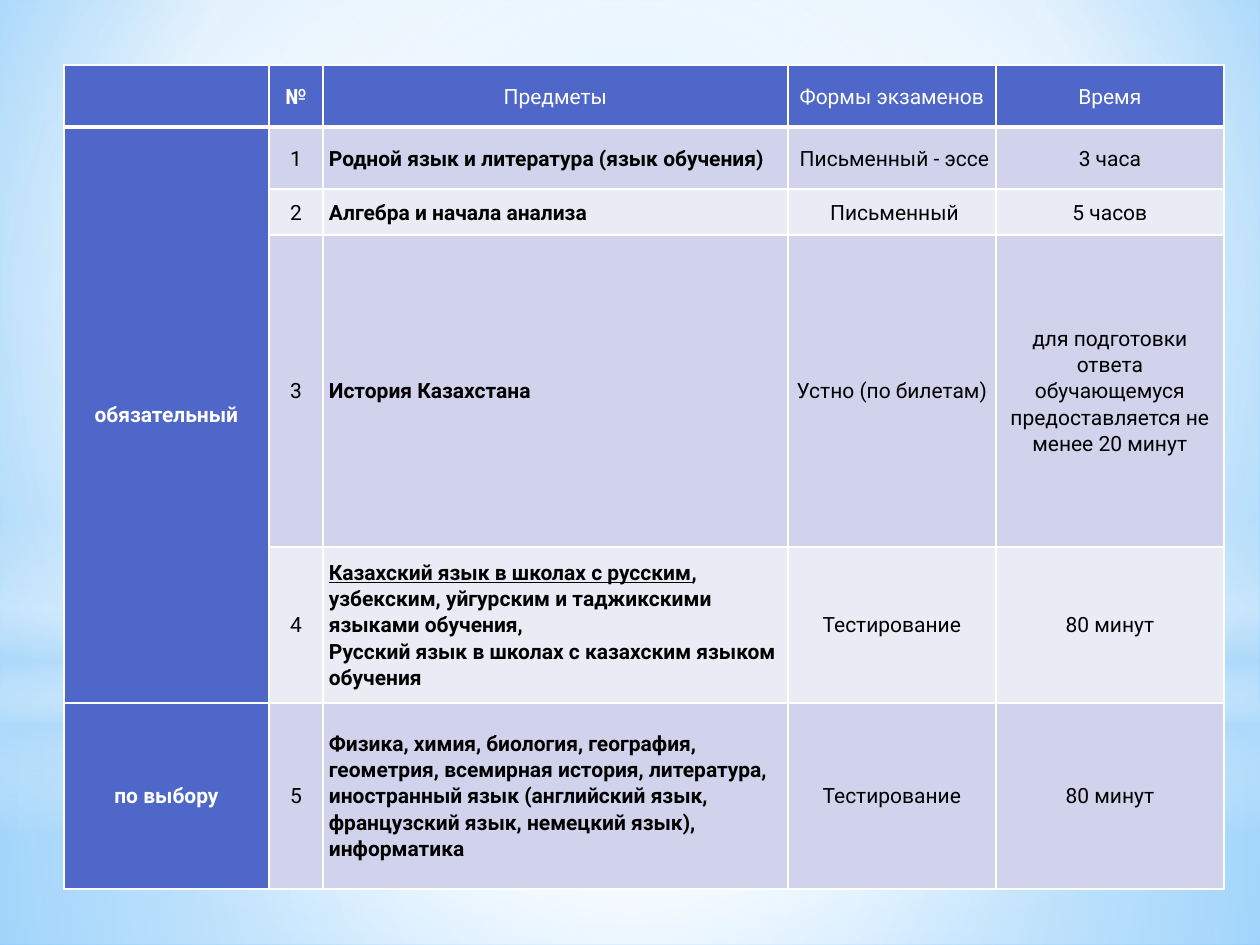
from lxml import etree
from pptx import Presentation
from pptx.dml.color import RGBColor
from pptx.enum.shapes import MSO_SHAPE
from pptx.enum.text import MSO_ANCHOR, PP_ALIGN
from pptx.oxml.ns import qn
from pptx.util import Pt

SCALE = 914400 / 126
RECTANGLE, OVAL = MSO_SHAPE.RECTANGLE, MSO_SHAPE.OVAL
LEFT, CENTER = PP_ALIGN.LEFT, PP_ALIGN.CENTER
MIDDLE = MSO_ANCHOR.MIDDLE

WHITE = RGBColor(0xFF, 0xFF, 0xFF)
BLACK = RGBColor(0x00, 0x00, 0x00)
INDIGO = RGBColor(0x4E, 0x67, 0xC8)
LILAC = RGBColor(0xD0, 0xD3, 0xEB)
PALE_LILAC = RGBColor(0xE9, 0xEB, 0xF5)
SKY = RGBColor(0x9E, 0xD5, 0xFF)
DEEP_SKY = RGBColor(0x5B, 0xB9, 0xFF)
HAZE = RGBColor(0xB4, 0xDC, 0xFA)

COLUMN_WIDTHS = [205, 54, 465, 208, 228]
ROW_HEIGHTS = [62, 62, 46, 312, 156, 186]
GROUP, NUMBER, SUBJECT = 0, 1, 2
WIDE_INSET_CELLS = {(1, 0), (3, 4), (5, 1)}

# A cell is a list of paragraphs, a paragraph is a list of (text, underline) runs
LANGUAGES = [
    [("Казахский язык в школах с русским", True),
     (", узбекским, уйгурским и таджикскими языками обучения,", False)],
    [("Русский язык в школах с казахским языком обучения", False)],
]
ROWS = [
    ["", "№", "Предметы", "Формы экзаменов", "Время"],
    ["обязательный", "1", "Родной язык и литература (язык обучения)",
     " Письменный - эссе", "3 часа"],
    ["", "2", "Алгебра и начала анализа", " Письменный", "5 часов"],
    ["", "3", "История Казахстана", "Устно (по билетам)",
     "для подготовки ответа обучающемуся предоставляется не менее 20 минут"],
    ["", "4", LANGUAGES, "Тестирование", "80 минут"],
    ["по выбору", "5",
     "Физика, химия, биология, география, геометрия, всемирная история, "
     "литература, иностранный язык (английский язык, французский язык, "
     "немецкий язык), информатика", "Тестирование", "80 минут"],
]


def px(length):
    return round(length * SCALE)


def add_node(parent, tag, **attributes):
    return etree.SubElement(parent, qn(tag), {k: str(v) for k, v in attributes.items()})


class ExamSlide:
    font = "Roboto"
    size = Pt(12)
    line_spacing = 1.07

    def __init__(self, presentation):
        self.slide = presentation.slides.add_slide(presentation.slide_layouts[6])

    def gradient(self, fill, owner, stops, focus=None, angle=90):
        """Stops are (position, colour, opacity) in percent; focus is l, t, r, b."""
        fill.gradient()
        gradient = next(owner.iter(qn("a:gradFill")))
        for child in list(gradient):
            gradient.remove(child)
        stop_list = add_node(gradient, "a:gsLst")
        for position, color, opacity in stops:
            stop = add_node(stop_list, "a:gs", pos=position * 1000)
            tint = add_node(stop, "a:srgbClr", val=color)
            if opacity < 100:
                add_node(tint, "a:alpha", val=opacity * 1000)
        if focus:
            path = add_node(gradient, "a:path", path="circle")
            add_node(path, "a:fillToRect", **{s: v * 1000 for s, v in zip("ltrb", focus)})
        else:
            add_node(gradient, "a:lin", ang=angle * 60000, scaled=0)

    def background(self, stops, focus):
        self.gradient(self.slide.background.fill, self.slide.element, stops, focus)

    def glow(self, kind, top, height, stops, focus=None):
        shape = self.slide.shapes.add_shape(kind, 0, px(top), px(1260), px(height))
        shape.shadow.inherit = False
        shape.line.fill.background()
        self.gradient(shape.fill, shape.element, stops, focus)

    def table(self, left, top, widths, heights):
        table = self.slide.shapes.add_table(
            len(heights), len(widths), px(left), px(top),
            px(sum(widths)), px(sum(heights))).table
        table.first_row = table.horz_banding = False
        for column, width in zip(table.columns, widths):
            column.width = px(width)
        for row, height in zip(table.rows, heights):
            row.height = px(height)
        return table

    def borders(self, cell, widths):
        properties = cell._tc.get_or_add_tcPr()
        for index, (side, width) in enumerate(zip("LRTB", widths)):
            line = add_node(properties, f"a:ln{side}", w=Pt(width))
            add_node(add_node(line, "a:solidFill"), "a:srgbClr", val=WHITE)
            properties.insert(index, line)

    def cell(self, cell, content, fill, color, bold, align, inset, border_widths):
        cell.fill.solid()
        cell.fill.fore_color.rgb = fill
        self.borders(cell, border_widths)
        cell.vertical_anchor = MIDDLE
        cell.margin_left = cell.margin_right = px(inset)
        cell.margin_top = cell.margin_bottom = 0
        if not content:
            return
        paragraphs = [[(content, False)]] if isinstance(content, str) else content
        frame = cell.text_frame
        for index, runs in enumerate(paragraphs):
            paragraph = frame.add_paragraph() if index else frame.paragraphs[0]
            paragraph.alignment = align
            paragraph.line_spacing = self.line_spacing
            for text, underline in runs:
                run = paragraph.add_run()
                run.text = text
                run.font.name = self.font
                run.font.size = self.size
                run.font.bold = bold
                run.font.underline = underline
                run.font.color.rgb = color


def main():
    presentation = Presentation()
    presentation.slide_width, presentation.slide_height = px(1260), px(945)
    exam = ExamSlide(presentation)

    # Sky backdrop
    middle = (50, 50, 50, 50)
    exam.background([(0, SKY, 100), (60, WHITE, 100), (100, DEEP_SKY, 100)],
                    (20, 10, 20, 60))
    exam.glow(RECTANGLE, 703, 242,
              [(0, WHITE, 91), (37, WHITE, 76), (100, HAZE, 79)], middle)
    exam.glow(RECTANGLE, 0, 703,
              [(0, WHITE, 89), (48, WHITE, 62), (100, HAZE, 79)], middle)
    exam.glow(RECTANGLE, 519, 315,
              [(0, WHITE, 0), (29, WHITE, 30), (45, HAZE, 40),
               (55, WHITE, 26), (65, HAZE, 60), (100, WHITE, 0)])
    exam.glow(OVAL, 220, 703, [(0, WHITE, 100), (56, WHITE, 0)], middle)

    # Exam table
    table = exam.table(64, 65, COLUMN_WIDTHS, ROW_HEIGHTS)
    for r, row in enumerate(ROWS):
        for c, content in enumerate(row):
            header = r == 0
            strong = header or c == GROUP
            subject = c == SUBJECT and not header
            band = LILAC if r % 2 else PALE_LILAC
            exam.cell(
                table.cell(r, c), content,
                fill=INDIGO if strong else band,
                color=WHITE if strong else BLACK,
                bold=c == GROUP or subject or (header and c == NUMBER),
                align=LEFT if subject else CENTER,
                inset=6 if subject or (r, c) in WIDE_INSET_CELLS else 0,
                border_widths=(1, 1, 3 if r == 1 else 1, 3 if header else 1))
    table.cell(1, GROUP).merge(table.cell(4, GROUP))

    presentation.save("out.pptx")


if __name__ == "__main__":
    main()
